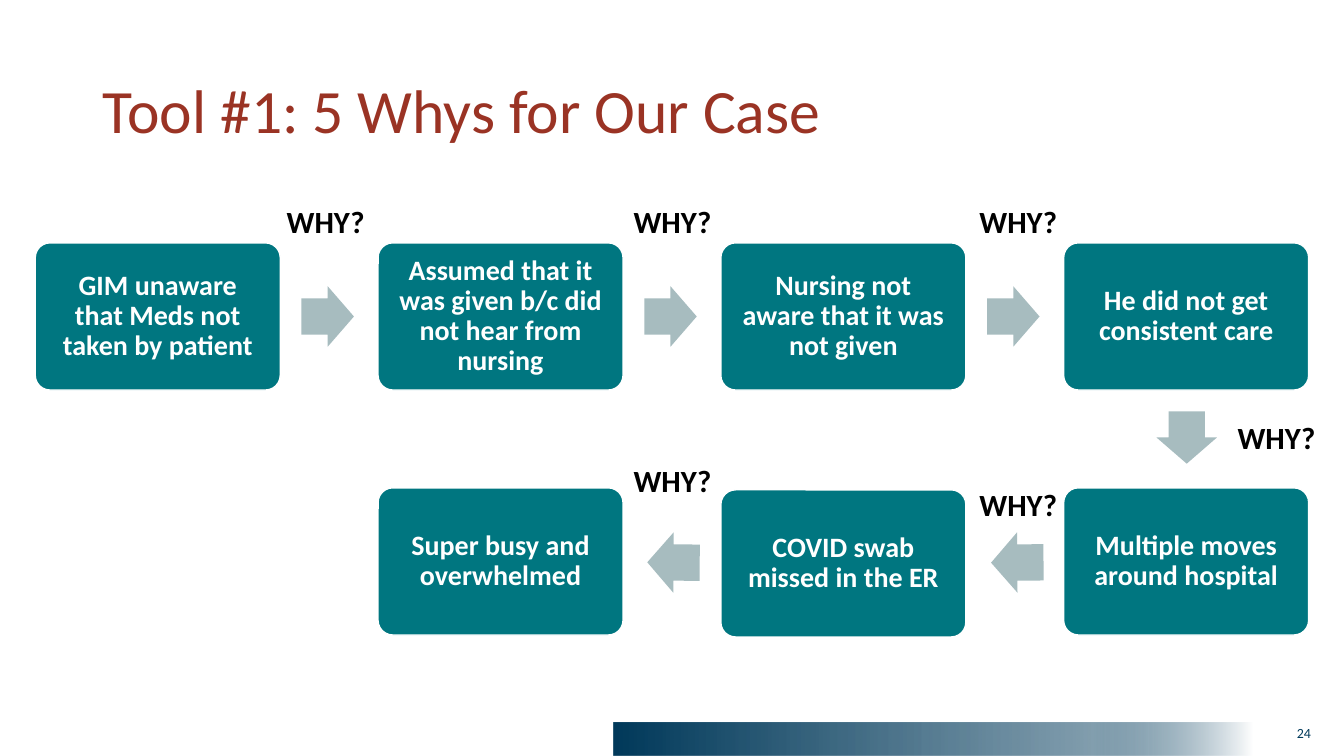
from lxml.etree import SubElement
from pptx import Presentation
from pptx.dml.color import RGBColor
from pptx.enum.shapes import MSO_SHAPE
from pptx.enum.text import MSO_ANCHOR, MSO_AUTO_SIZE, PP_ALIGN
from pptx.oxml.ns import qn
from pptx.util import Inches, Pt

COLUMN_LEFT, COLUMN_PITCH = 0.35, 3.4
TOP_ROW, BOTTOM_ROW = 2.41, 4.84
STEPS = [
    (0, TOP_ROW, "GIM unaware that Meds not taken by patient"),
    (1, TOP_ROW, "Assumed that it was given b/c did not hear from nursing"),
    (2, TOP_ROW, "Nursing not aware that it was not given"),
    (3, TOP_ROW, "He did not get consistent care"),
    (3, BOTTOM_ROW, "Multiple moves around hospital"),
    (2, BOTTOM_ROW + 0.02, "COVID swab missed in the ER"),
    (1, BOTTOM_ROW, "Super busy and overwhelmed"),
]
ARROWS = [(2.99 + COLUMN_PITCH * gap, 2.84, 0) for gap in range(3)] + [
    (11.51, 4.04, 90), (9.83, 5.28, 179.6), (6.42, 5.28, 180.4)]
WHY_LABELS = [(2.56, 1.96), (6, 1.96), (9.43, 1.96),
              (11.99, 4.11), (6, 4.53), (9.43, 4.77)]
# position %, colour, opacity %
BAND_STOPS = [(0, "003A5B", 100), (45, "003A5B", 69),
              (75, "003A5B", 49), (100, "FFFFFF", 100)]


def color(hex_code):
    return RGBColor.from_string(hex_code)


class WhySlide:
    font = "Calibri"
    navy, teal, gray, red = "003A5B", "007680", "A7BCBF", "9A3324"

    def __init__(self, deck):
        self.page = deck.slides.add_slide(deck.slide_layouts[5])

    def set_text(self, box, text, size, hex_code, bold=False, align=PP_ALIGN.LEFT,
                 anchor=MSO_ANCHOR.TOP, spacing=1.0, inset=(0.1, 0.05)):
        frame = box.text_frame
        frame.word_wrap = True
        frame.auto_size = MSO_AUTO_SIZE.NONE
        frame.vertical_anchor = anchor
        frame.margin_left = frame.margin_right = Inches(inset[0])
        frame.margin_top = frame.margin_bottom = Inches(inset[1])
        para = frame.paragraphs[0]
        para.alignment = align
        para.line_spacing = spacing
        span = para.add_run()
        span.text = text
        span.font.name = self.font
        span.font.size = Pt(size)
        span.font.bold = bold
        span.font.color.rgb = color(hex_code)

    def title(self, text):
        box = self.page.shapes.title
        box.left, box.top = Inches(0.92), Inches(0.4)
        box.width, box.height = Inches(11.5), Inches(1.45)
        self.set_text(box, text, 44, self.red, anchor=MSO_ANCHOR.MIDDLE, spacing=0.9)

    def label(self, text, left, top, width, height, size, hex_code, **style):
        box = self.page.shapes.add_textbox(
            Inches(left), Inches(top), Inches(width), Inches(height))
        self.set_text(box, text, size, hex_code, **style)

    def shape(self, kind, left, top, width, height, fill):
        shape = self.page.shapes.add_shape(
            kind, Inches(left), Inches(top), Inches(width), Inches(height))
        shape.shadow.inherit = False
        shape.fill.solid()
        shape.fill.fore_color.rgb = color(fill)
        shape.line.fill.background()
        return shape

    def step(self, column, top, text):
        box = self.shape(MSO_SHAPE.ROUNDED_RECTANGLE,
                         COLUMN_LEFT + COLUMN_PITCH * column, top, 2.43, 1.46, self.teal)
        box.adjustments[0] = 0.1
        box.line.color.rgb = color("FFFFFF")
        box.line.width = Pt(1)
        self.set_text(box, text, 20, "FFFFFF", bold=True, align=PP_ALIGN.CENTER,
                      anchor=MSO_ANCHOR.MIDDLE, spacing=0.9, inset=(0.12, 0.12))

    def arrow(self, left, top, rotation):
        arrow = self.shape(MSO_SHAPE.RIGHT_ARROW, left, top, 0.52, 0.6, self.gray)
        arrow.adjustments[0], arrow.adjustments[1] = 0.6, 0.5
        arrow.rotation = rotation

    def footer_band(self):
        band = self.shape(MSO_SHAPE.RECTANGLE, 6.09, 7.17, 6.33, 0.33, self.navy)
        band.fill.gradient()
        band.fill.gradient_angle = 0
        stops = band._element.spPr.find(qn("a:gradFill")).find(qn("a:gsLst"))
        for stop in list(stops):
            stops.remove(stop)
        for position, hex_code, opacity in BAND_STOPS:
            stop = SubElement(stops, qn("a:gs"), pos=str(position * 1000))
            shade = SubElement(stop, qn("a:srgbClr"), val=hex_code)
            if opacity < 100:
                SubElement(shade, qn("a:alpha"), val=str(opacity * 1000))


def main():
    deck = Presentation()
    deck.slide_width, deck.slide_height = Inches(13.33), Inches(7.5)
    slide = WhySlide(deck)
    slide.footer_band()
    slide.title("Tool #1: 5 Whys for Our Case")
    slide.label("24", 12.42, 7.14, 0.68, 0.35, 10, slide.navy, align=PP_ALIGN.RIGHT)
    for column, top, text in STEPS:
        slide.step(column, top, text)
    for left, top, rotation in ARROWS:
        slide.arrow(left, top, rotation)
    for left, top in WHY_LABELS:
        slide.label("WHY?", left, top, 1.34, 0.47, 22, "000000",
                    bold=True, align=PP_ALIGN.CENTER)
    deck.save("out.pptx")


if __name__ == "__main__":
    main()
